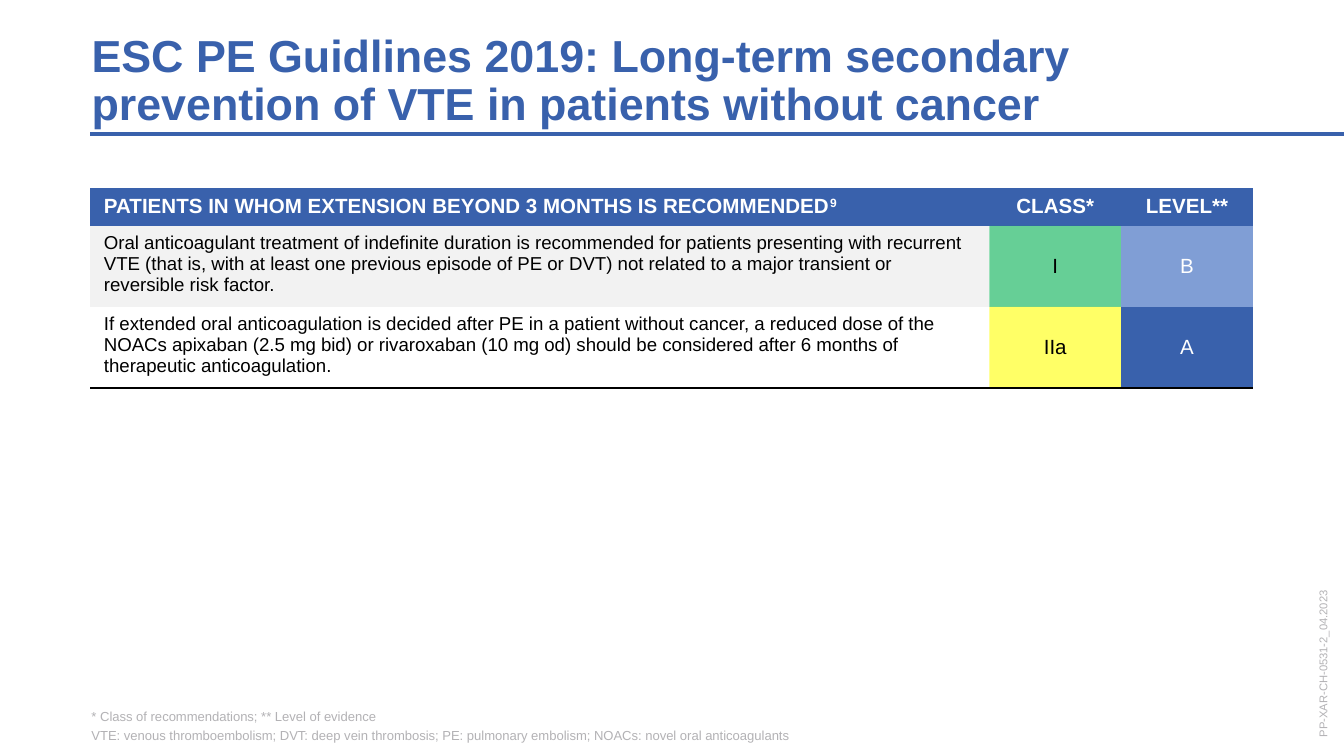
from pptx import Presentation
from pptx.dml.color import RGBColor
from pptx.enum.shapes import MSO_CONNECTOR as Connector
from pptx.enum.text import MSO_ANCHOR as Anchor, MSO_AUTO_SIZE as AutoSize, PP_ALIGN as Align
from pptx.oxml import parse_xml
from pptx.oxml.ns import nsdecls, qn
from pptx.util import Cm, Pt
from lxml.etree import SubElement

COLORS = {
    "blue": "3961AC", "light_blue": "809ED5", "gray": "B3B2B5", "pale": "F2F2F2",
    "green": "00B050", "yellow": "FFFF00", "white": "FFFFFF", "black": "000000",
}
FONT = "Arial"
PLAIN_TABLE = "{2D5ABB26-0587-4C30-8999-92F81FD0307C}"

TITLE = "ESC PE Guidlines 2019: Long-term secondary prevention of VTE in patients without cancer"
HEADER = ["PATIENTS IN WHOM EXTENSION BEYOND 3 MONTHS IS RECOMMENDED", "CLASS*", "LEVEL**"]
REFERENCE = "9"
RECOMMENDATIONS = [
    ("Oral anticoagulant treatment of indefinite duration is recommended for patients "
     "presenting with recurrent VTE (that is, with at least one previous episode of PE or DVT) "
     "not related to a major transient or reversible risk factor.", "I", "B"),
    ("If extended oral anticoagulation is decided after PE in a patient without cancer, "
     "a reduced dose of the NOACs apixaban (2.5 mg bid) or rivaroxaban (10 mg od) should be "
     "considered after 6 months of therapeutic anticoagulation.", "IIa", "A"),
]
FILLS = [("pale", "green", "light_blue"), ("white", "yellow", "blue")]
TEXT_COLORS = ("black", "black", "white")
FOOTNOTES = [
    "* Class of recommendations; ** Level of evidence",
    "VTE: venous thromboembolism; DVT: deep vein thrombosis; PE: pulmonary embolism; "
    "NOACs: novel oral anticoagulants",
]
DOCUMENT_CODE = "PP-XAR-CH-0531-2_04.2023"

SLIDE_WIDTH, SLIDE_HEIGHT = 25.4, 14.29
LEFT = 1.71
COLUMNS = (16.99, 2.49, 2.49)
ROWS = (0.71, 1.53, 1.53)
TRANSLUCENT = ("green", "yellow")


def rgb(name):
    return RGBColor.from_string(COLORS[name])


def format_text(frame, size, color, bold=False):
    for para in frame.paragraphs:
        for span in para.runs:
            span.font.name = FONT
            span.font.size = Pt(size)
            span.font.bold = bold
            span.font.color.rgb = rgb(color)


def prepare_frame(frame, anchor):
    frame.margin_left = frame.margin_right = frame.margin_top = frame.margin_bottom = 0
    frame.word_wrap = True
    frame.auto_size = AutoSize.NONE
    frame.vertical_anchor = anchor


def add_text(page, lines, place, anchor, size):
    box = page.shapes.add_textbox(*map(Cm, place))
    frame = box.text_frame
    prepare_frame(frame, anchor)
    frame.text = "\n".join(lines)
    format_text(frame, size, "gray")
    return box


def fill_cell(cell, color):
    cell.fill.solid()
    cell.fill.fore_color.rgb = rgb(color)
    if color in TRANSLUCENT:
        tint = cell._tc.tcPr.find(".//" + qn("a:srgbClr"))
        SubElement(tint, qn("a:alpha"), val="60000")


def add_bottom_border(cell):
    cell._tc.tcPr.insert(0, parse_xml(
        f'<a:lnB {nsdecls("a")} w="12700"><a:solidFill>'
        f'<a:srgbClr val="{COLORS["black"]}"/></a:solidFill></a:lnB>'))


def add_title(page):
    title = page.shapes.title
    title.left, title.top, title.width, title.height = map(Cm, (1.73, 0.61, 22.99, 1.85))
    frame = title.text_frame
    prepare_frame(frame, Anchor.BOTTOM)
    frame.text = TITLE
    frame.paragraphs[0].alignment = Align.LEFT
    frame.paragraphs[0].line_spacing = 0.9
    format_text(frame, 24, "blue", True)


def add_rule(page):
    rule = page.shapes.add_connector(
        Connector.STRAIGHT, Cm(LEFT), Cm(2.54), Cm(SLIDE_WIDTH), Cm(2.54))
    rule.line.color.rgb = rgb("blue")
    rule.line.width = Pt(2.25)
    SubElement(rule._element.spPr, qn("a:effectLst"))


def add_recommendations(page):
    frame = page.shapes.add_table(
        len(ROWS), len(COLUMNS), Cm(LEFT), Cm(3.56), Cm(sum(COLUMNS)), Cm(sum(ROWS)))
    table = frame.table
    table._tbl.tblPr.find(qn("a:tableStyleId")).text = PLAIN_TABLE
    for column, width in zip(table.columns, COLUMNS):
        column.width = Cm(width)
    for row, height in zip(table.rows, ROWS):
        row.height = Cm(height)

    contents = [HEADER, *RECOMMENDATIONS]
    fills = [("blue",) * len(COLUMNS), *FILLS]
    for r, (texts, colors) in enumerate(zip(contents, fills)):
        for c, (text, color) in enumerate(zip(texts, colors)):
            cell = table.cell(r, c)
            cell.text_frame.text = text
            para = cell.text_frame.paragraphs[0]
            is_header = r == 0
            if is_header and c == 0:
                reference = para.add_run()
                reference.text = REFERENCE
                reference.font._element.set("baseline", "30000")
            if c > 0:
                para.alignment = Align.CENTER
                if not is_header:
                    cell.vertical_anchor = Anchor.MIDDLE
            size = 11 if is_header or c > 0 else 10
            format_text(cell.text_frame, size, "white" if is_header else TEXT_COLORS[c], is_header)
            fill_cell(cell, color)
            if r == len(ROWS) - 1:
                add_bottom_border(cell)


def main():
    deck = Presentation()
    deck.slide_width, deck.slide_height = Cm(SLIDE_WIDTH), Cm(SLIDE_HEIGHT)
    page = deck.slides.add_slide(deck.slide_layouts[5])

    code = add_text(page, [DOCUMENT_CODE], (23.22, 11.76, 3.56, 0.79), Anchor.MIDDLE, 6)
    code.rotation = 270
    add_rule(page)
    add_title(page)
    notes = add_text(page, FOOTNOTES, (1.73, 13.39, 21.97, 0.66), Anchor.BOTTOM, 7)
    for para in notes.text_frame.paragraphs:
        para.space_after = Pt(2)
    add_recommendations(page)

    deck.save("out.pptx")


if __name__ == "__main__":
    main()
